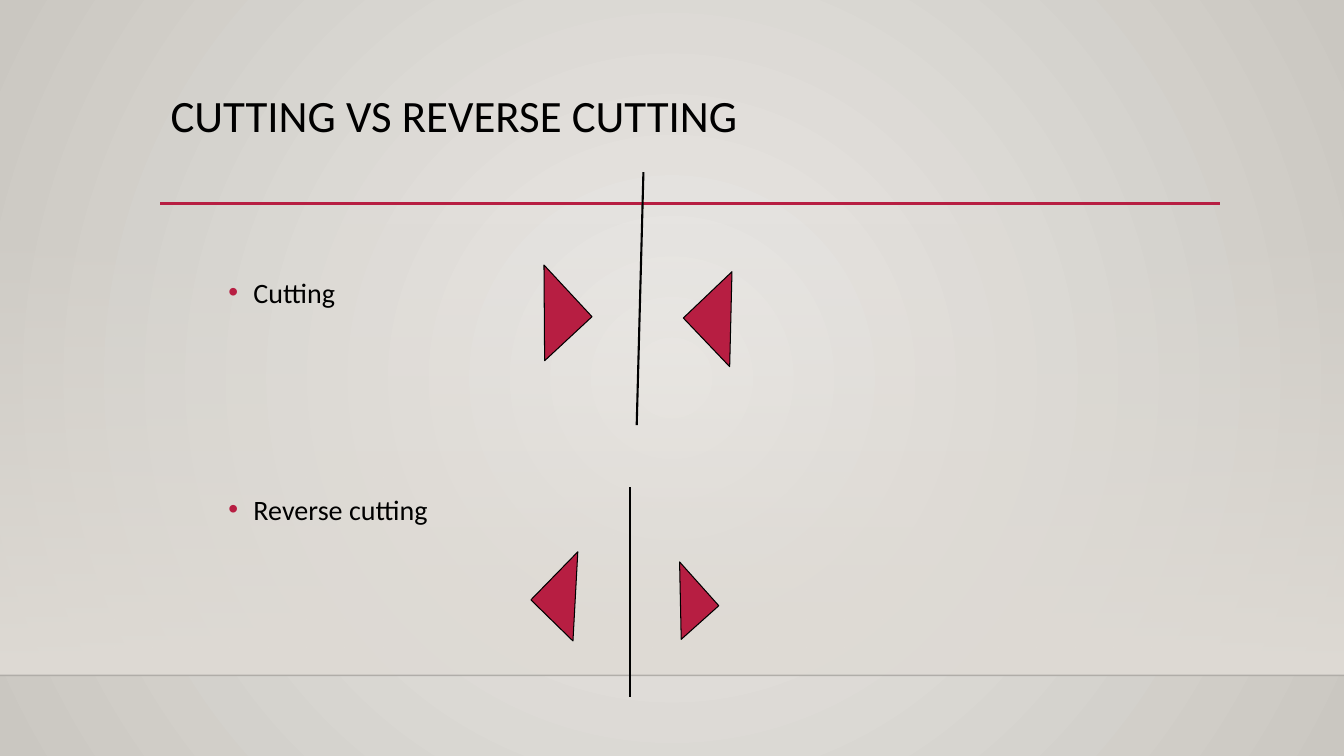
from lxml.etree import SubElement as Sub
from pptx import Presentation
from pptx.dml.color import RGBColor
from pptx.enum.shapes import MSO_CONNECTOR as Link, MSO_SHAPE as Form
from pptx.enum.text import MSO_ANCHOR as Anchor, PP_ALIGN as Align
from pptx.oxml import parse_xml
from pptx.oxml.ns import nsdecls, qn
from pptx.util import Inches, Pt

RED = RGBColor(0xB7, 0x1E, 0x42)
BLACK = RGBColor(0, 0, 0)
PALE = RGBColor(0xEC, 0xEA, 0xE7)
GREY = RGBColor(0xCA, 0xC7, 0xC1)
WALL = RGBColor(0xDF, 0xDB, 0xD5)
COLS, ROWS = 160, 90
WIDE, HIGH = Inches(13.33), Inches(7.5)


def write(para, text, size=20, color=BLACK, font="Calibri", lines=1.2, before=0):
    """Put formatted text into a paragraph."""
    para.alignment = Align.LEFT
    para.line_spacing = lines
    para.space_before = Pt(before)
    run = para.add_run()
    run.text = text
    run.font.size, run.font.name = Pt(size), font
    run.font.color.rgb = color


def fade(color, share):
    """Set the opacity of a solid colour element in percent."""
    Sub(color, qn("a:alpha"), val=str(share * 1000))


class Board:
    """Draw on one slide with a grid of 160 columns and 90 rows."""

    def __init__(self, deck):
        """Add a title-only slide."""
        self.slide = deck.slides.add_slide(deck.slide_layouts[5])
        self.items = self.slide.shapes

    def grid(self, *cells):
        """Turn alternating columns and rows into lengths."""
        units = WIDE / COLS, HIGH / ROWS
        return [round(cell * units[i % 2]) for i, cell in enumerate(cells)]

    def back(self, inner, outer):
        """Fill the background from the centre outwards."""
        fill = self.slide.background.fill
        fill.gradient()
        for stop, color in zip(fill.gradient_stops, (inner, outer)):
            stop.color.rgb = color
        grad = self.slide.background._cSld.find(".//" + qn("a:gradFill"))
        grad.replace(grad.find(qn("a:lin")), parse_xml(
            f'<a:path {nsdecls("a")} path="circle">'
            '<a:fillToRect l="50000" t="50000" r="50000" b="50000"/></a:path>'))

    def shape(self, form, *cells):
        """Add a preset shape without shadow."""
        item = self.items.add_shape(form, *self.grid(*cells))
        item.shadow.inherit = False
        return item

    def haze(self, *cells):
        """Add a band that fades in downwards."""
        band = self.shape(Form.RECTANGLE, *cells)
        band.line.fill.background()
        band.fill.gradient()
        band.fill.gradient_angle = 270
        for stop in band.fill.gradient_stops:
            stop.color.rgb = WALL
        fade(band._element.find(".//" + qn("a:srgbClr")), 0)

    def wedge(self, turn, *cells):
        """Add a rotated red triangle."""
        item = self.shape(Form.RIGHT_TRIANGLE, *cells)
        item.rotation = turn
        item.fill.solid()
        item.fill.fore_color.rgb = RED
        item.line.color.rgb, item.line.width = BLACK, Pt(0.75)

    def line(self, *cells, color=BLACK, width=0.75, share=100):
        """Add a straight line."""
        item = self.items.add_connector(Link.STRAIGHT, *self.grid(*cells))
        item.line.color.rgb, item.line.width = color, Pt(width)
        Sub(item._element.spPr, qn("a:effectLst"))
        if share < 100:
            fade(item._element.spPr.find(".//" + qn("a:srgbClr")), share)

    def title(self, text, *cells):
        """Place and fill the title."""
        item = self.items.title
        item.left, item.top, item.width, item.height = self.grid(*cells)
        frame = item.text_frame
        frame.word_wrap, frame.vertical_anchor = True, Anchor.TOP
        write(frame.paragraphs[0], text, size=32, lines=0.9)

    def points(self, texts, gap, *cells):
        """Add a bulleted list."""
        frame = self.items.add_textbox(*self.grid(*cells)).text_frame
        frame.word_wrap = True
        for i, text in enumerate(texts):
            para = frame.add_paragraph() if i else frame.paragraphs[0]
            write(para, text, before=gap if i else 0)
            props = para._p.get_or_add_pPr()
            props.set("marL", str(Inches(0.25)))
            props.set("indent", str(-Inches(0.25)))
            Sub(Sub(props, qn("a:buClr")), qn("a:srgbClr"), val=str(RED))
            Sub(props, qn("a:buFont"), typeface="Arial")
            Sub(props, qn("a:buChar"), char="•")


def main():
    """Build and save the slide."""
    deck = Presentation()
    deck.slide_width, deck.slide_height = WIDE, HIGH
    board = Board(deck)
    board.back(PALE, GREY)
    board.haze(0, 26.5, COLS, 53.9)
    board.line(0, 80.4, COLS, 80.4, width=1, share=20)
    board.line(19.1, 24.2, 145.2, 24.2, color=RED, width=2.5)
    board.title("CUTTING VS REVERSE CUTTING", 19.1, 10.6, 126, 13.8)
    board.points(["Cutting", "Reverse cutting"], 126, 26, 31.4, 35, 48)
    board.wedge(227.1, 60.6, 33.4, 8.4, 7.7)
    board.wedge(46.4, 83, 34, 8, 8)
    board.line(76.6, 20.5, 75.8, 50.6, width=1.5)
    board.line(75, 58, 75, 83)
    board.wedge(44.3, 65, 67, 7, 8)
    board.wedge(228.2, 77.5, 68.5, 7, 6)
    deck.save("out.pptx")


if __name__ == "__main__":
    main()
